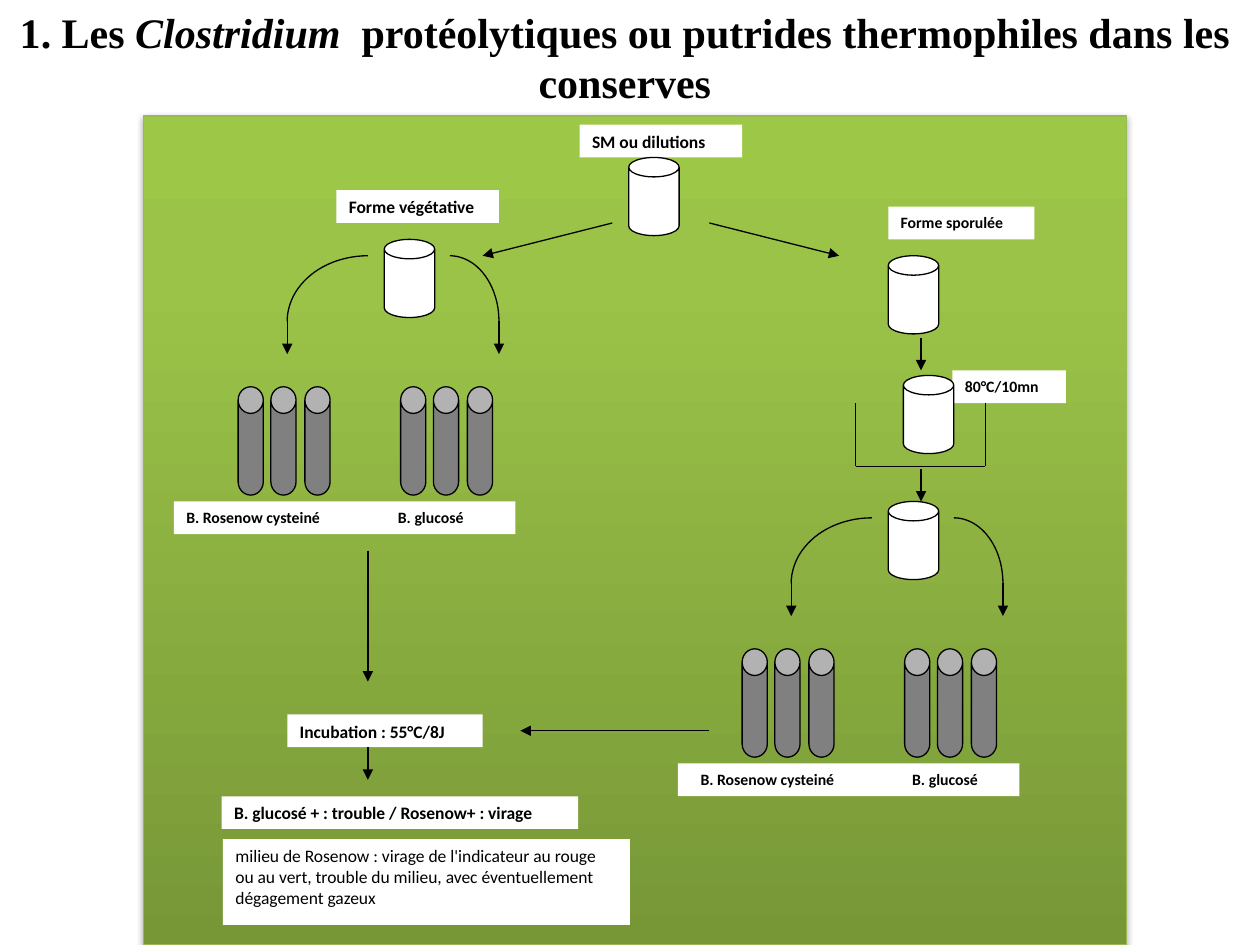
import copy
import math

import pptx
import pptx.util
from lxml import etree
from pptx.dml.color import RGBColor
from pptx.enum.shapes import MSO_CONNECTOR, MSO_SHAPE
from pptx.enum.text import MSO_ANCHOR, PP_ALIGN
from pptx.oxml.ns import qn
from pptx.util import Inches

TITLE = [
    ("1. Les ", False),
    ("Clostridium ", True),
    (" protéolytiques ou putrides thermophiles dans les conserves", False),
]
GRADIENT = [(0, "779737"), (0.8, "9BC348"), (1, "9DC746")]
LABEL_HEIGHT = 0.26
LABELS = [
    ("Forme végétative", 2.67, 1.51, 1.29, 10),
    ("SM ou dilutions", 4.6, 0.99, 1.29, 10),
    ("Forme sporulée", 7.05, 1.64, 1.16, 9),
    ("Incubation : 55°C/8J", 2.28, 5.67, 1.55, 10),
    ("B. glucosé + : trouble / Rosenow+ : virage", 1.76, 6.32, 2.83, 10),
    ("80°C/10mn", 7.56, 2.94, 0.9, 9),
]
NOTE = ("milieu de Rosenow : virage de l'indicateur au rouge ou au vert, "
        "trouble du milieu, avec éventuellement dégagement gazeux")
BROTHS = "B. Rosenow cysteiné\tB. glucosé"
FLASKS = [(4.99, 1.25), (7.05, 2.03), (7.17, 2.98)]
ARROWS = [
    (4.86, 1.77, 3.83, 2.03),
    (5.63, 1.77, 6.66, 2.03),
    (7.31, 2.68, 7.31, 2.94),
    (7.31, 3.72, 7.31, 3.98),
    (2.92, 4.37, 2.92, 5.41),
    (5.63, 5.8, 4.13, 5.8),
    (2.92, 5.93, 2.92, 6.19),
]
WATER_BATH = [
    (6.79, 3.7, 7.82, 3.7),
    (7.82, 3.7, 7.82, 3.2),
    (6.79, 3.7, 6.79, 3.2),
]
BRANCHES = [(3.05, 1.9, 0.1), (7.05, 3.98, 0.18)]
RACK_OFFSETS = [-1.16, 0.13]
TUBE_OFFSETS = [0, 0.26, 0.53]
CURVES = [(-0.13, -0.64), (0.52, 0.39)]
CURVE_HEIGHT = 0.52
CURVE_STEPS = 24

prs = pptx.Presentation()
prs.slide_width, prs.slide_height = Inches(10), Inches(7.5)
slide = prs.slides.add_slide(prs.slide_layouts[6])


def color(hex_value):
    return RGBColor.from_string(hex_value)


def outline(part, hex_value="000000"):
    part.line.color.rgb = color(hex_value)
    part.line.width = pptx.util.Pt(0.75)


def add_part(kind, x, y, width, height, fill, outlined=True):
    part = slide.shapes.add_shape(kind, Inches(x), Inches(y), Inches(width), Inches(height))
    part.shadow.inherit = False
    part.fill.solid()
    part.fill.fore_color.rgb = color(fill)
    if outlined:
        outline(part)
    else:
        part.line.fill.background()
    return part


def add_label(text, x, y, width, size, height=LABEL_HEIGHT, bold=True, inset=0.1, tab=None):
    label = add_part(MSO_SHAPE.RECTANGLE, x, y, width, height, "FFFFFF", outlined=False)
    frame = label.text_frame
    frame.word_wrap = True
    frame.vertical_anchor = MSO_ANCHOR.TOP
    frame.margin_left = Inches(inset)
    paragraph = frame.paragraphs[0]
    paragraph.text = text
    paragraph.alignment = PP_ALIGN.LEFT
    if tab:
        tabs = etree.SubElement(paragraph._p.get_or_add_pPr(), qn("a:tabLst"))
        etree.SubElement(tabs, qn("a:tab"), pos=str(Inches(tab)), algn="l")
    paragraph.font.name = "Calibri"
    paragraph.font.size = pptx.util.Pt(size)
    paragraph.font.bold = bold
    paragraph.font.color.rgb = color("000000")


def add_can(x, y, width, height, fill, cap):
    can = add_part(MSO_SHAPE.CAN, x, y, width, height, fill)
    can.adjustments[0] = cap


def add_flask(x, y):
    add_can(x, y, 0.4, 0.62, "FFFFFF", 0.385)


def add_line(x1, y1, x2, y2, arrow=True):
    line = slide.shapes.add_connector(
        MSO_CONNECTOR.STRAIGHT, Inches(x1), Inches(y1), Inches(x2), Inches(y2))
    outline(line)
    if arrow:
        etree.SubElement(line.line._get_or_add_ln(), qn("a:tailEnd"), type="triangle")
    etree.SubElement(line._element.spPr, qn("a:effectLst"))


def add_curve(x, y, width, height):
    angles = [math.pi / 2 * step / CURVE_STEPS for step in range(CURVE_STEPS + 1)]
    points = [(Inches(x + width * math.sin(a)), Inches(y + height * (1 - math.cos(a))))
              for a in angles]
    builder = slide.shapes.build_freeform(*points[0])
    builder.add_line_segments(points[1:], close=False)
    curve = builder.convert_to_shape()
    curve.shadow.inherit = False
    curve.fill.background()
    outline(curve)


def add_panel():
    panel = add_part(MSO_SHAPE.RECTANGLE, 1.14, 0.92, 7.8, 6.58, "9BC348")
    outline(panel, "98B955")
    panel.fill.gradient()
    panel.fill.gradient_angle = 90
    stops = panel._element.spPr.find(".//" + qn("a:gsLst"))
    stops.append(copy.deepcopy(stops[0]))
    for stop, (position, hex_value) in zip(panel.fill.gradient_stops, GRADIENT):
        stop.position = position
        stop.color.rgb = color(hex_value)
    effects = panel._element.spPr.find(qn("a:effectLst"))
    shadow = etree.SubElement(effects, qn("a:outerShdw"), blurRad="40000", dist="23000",
                              dir="5400000", rotWithShape="0")
    shade = etree.SubElement(shadow, qn("a:srgbClr"), val="000000")
    etree.SubElement(shade, qn("a:alpha"), val="35000")


def add_branch(x, y, inset):
    add_flask(x, y)
    for start, width in CURVES:
        end_x, end_y = x + start + width, y + 0.13 + CURVE_HEIGHT
        add_curve(x + start, y + 0.13, width, CURVE_HEIGHT)
        add_line(end_x, end_y, end_x, end_y + 0.26)
    for rack in RACK_OFFSETS:
        for tube in TUBE_OFFSETS:
            add_can(x + rack + tube, y + 1.17, 0.2, 0.86, "808080", 1.058)
    add_label(BROTHS, x - 1.67, y + 2.08, 2.71, 9, inset=inset, tab=1.68)


def add_title():
    box = slide.shapes.add_textbox(Inches(-0.04), 0, Inches(10), Inches(0.91))
    box.text_frame.word_wrap = True
    paragraph = box.text_frame.paragraphs[0]
    paragraph.alignment = PP_ALIGN.CENTER
    paragraph.font.name = "Times New Roman"
    paragraph.font.size = pptx.util.Pt(24)
    paragraph.font.bold = True
    paragraph.font.color.rgb = color("000000")
    for text, italic in TITLE:
        run = paragraph.add_run()
        run.text = text
        run.font.italic = italic


add_panel()
for text, x, y, width, size in LABELS:
    add_label(text, x, y, width, size)
for line in WATER_BATH:
    add_line(*line, arrow=False)
for flask in FLASKS:
    add_flask(*flask)
for branch in BRANCHES:
    add_branch(*branch)
for arrow in ARROWS:
    add_line(*arrow)
add_title()
add_label(NOTE, 1.77, 6.66, 3.23, 10, height=0.68, bold=False)

prs.save("out.pptx")
